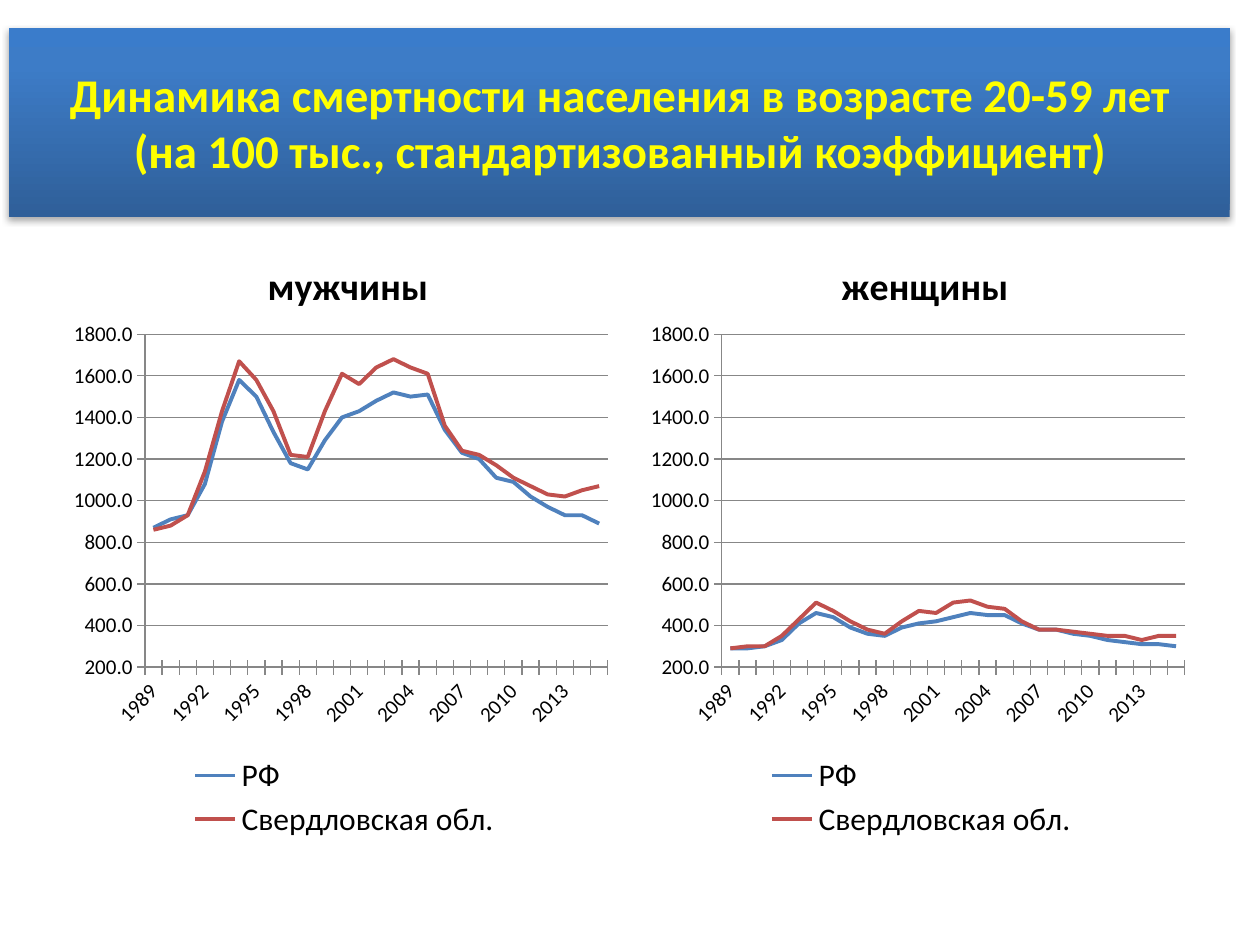
import copy
import dataclasses

import pptx
import pptx.chart.data
import pptx.dml.color
import pptx.enum.chart
import pptx.enum.shapes
import pptx.enum.text
import pptx.oxml
import pptx.oxml.ns
import pptx.util

Cm = pptx.util.Cm
Pt = pptx.util.Pt
Color = pptx.dml.color.RGBColor.from_string
qn = pptx.oxml.ns.qn


@dataclasses.dataclass(frozen=True)
class Theme:
    font: str = "Calibri"
    ink: str = "000000"
    heading: str = "FFFF00"
    grid: str = "878787"
    banner: tuple = ((0, "2F5F99"), (0.8, "3D7CC7"), (1, "3A7CCB"))
    series: tuple = ("4F81BD", "C0504D")
    heading_size: float = 26.8
    chart_title_size: float = 21.6
    legend_size: float = 18
    axis_size: float = 12


theme = Theme()


def place(element, index, **fractions):
    for old in element.findall(qn("c:layout")):
        element.remove(old)
    target = '<c:layoutTarget val="inner"/>' if element.tag == qn("c:plotArea") else ""
    modes = '<c:xMode val="edge"/><c:yMode val="edge"/>'
    values = "".join(f'<c:{key} val="{value}"/>' for key, value in fractions.items())
    element.insert(index, pptx.oxml.parse_xml(
        f'<c:layout {pptx.oxml.ns.nsdecls("c")}><c:manualLayout>'
        f"{target}{modes}{values}</c:manualLayout></c:layout>"))


def style(font, size, color, bold=False):
    font.name = theme.font
    font.size = Pt(size)
    font.bold = bold
    font.color.rgb = Color(color)


deck = pptx.Presentation()
deck.slide_width = Cm(25.4)
deck.slide_height = Cm(19.05)
page = deck.slides.add_slide(deck.slide_layouts[6])

years = [str(year) for year in range(1989, 2016)]
regions = ("РФ", "Свердловская обл.")
panels = (
    ("мужчины", 1.27, 0.355, (
        (870, 910, 930, 1080, 1380, 1580, 1500, 1330, 1180, 1150, 1290, 1400, 1430, 1480,
         1520, 1500, 1510, 1340, 1230, 1200, 1110, 1090, 1020, 970, 930, 930, 890),
        (860, 880, 930, 1140, 1430, 1670, 1580, 1430, 1220, 1210, 1430, 1610, 1560, 1640,
         1680, 1640, 1610, 1360, 1240, 1220, 1170, 1110, 1070, 1030, 1020, 1050, 1070))),
    ("женщины", 12.9, 0.35, (
        (290, 290, 300, 330, 410, 460, 440, 390, 360, 350, 390, 410, 420, 440,
         460, 450, 450, 410, 380, 380, 360, 350, 330, 320, 310, 310, 300),
        (290, 300, 300, 350, 430, 510, 470, 420, 380, 360, 420, 470, 460, 510,
         520, 490, 480, 420, 380, 380, 370, 360, 350, 350, 330, 350, 350))),
)

for title, left, title_x, rates in panels:
    data = pptx.chart.data.CategoryChartData(number_format="0.0")
    data.categories = years
    for region, values in zip(regions, rates):
        data.add_series(region, values)
    chart = page.shapes.add_chart(
        pptx.enum.chart.XL_CHART_TYPE.LINE,
        Cm(left), Cm(4.45), Cm(11.23), Cm(12.57), data).chart
    style(chart.font, theme.legend_size, theme.ink)

    chart.has_title = True
    paragraph = chart.chart_title.text_frame.paragraphs[0]
    paragraph.text = title
    style(paragraph.font, theme.chart_title_size, theme.ink, True)
    place(chart.chart_title._element, 1, x=title_x, y=0.05)

    chart.has_legend = True
    chart.legend.position = pptx.enum.chart.XL_LEGEND_POSITION.BOTTOM
    chart.legend.include_in_layout = False
    style(chart.legend.font, theme.legend_size, theme.ink)
    place(chart.legend._element, 1, x=0.22, y=0.85, w=0.57, h=0.15)
    place(chart._chartSpace.chart.plotArea, 0, x=0.147, y=0.182, w=0.831, h=0.534)

    for axis in (chart.category_axis, chart.value_axis):
        style(axis.tick_labels.font, theme.axis_size, theme.ink)
        axis.major_tick_mark = pptx.enum.chart.XL_TICK_MARK.CROSS
        axis.minor_tick_mark = pptx.enum.chart.XL_TICK_MARK.NONE
        axis.format.line.color.rgb = Color(theme.grid)
        axis.format.line.width = Pt(0.75)

    years_axis = chart.category_axis._element
    years_axis.find(qn("c:txPr")).find(qn("a:bodyPr")).set("rot", "-2700000")
    for tag, step in (("tickLblSkip", 3), ("tickMarkSkip", 1)):
        years_axis.find(qn("c:noMultiLvlLbl")).addprevious(pptx.oxml.parse_xml(
            f'<c:{tag} {pptx.oxml.ns.nsdecls("c")} val="{step}"/>'))

    rate_axis = chart.value_axis
    rate_axis.minimum_scale = 200
    rate_axis.maximum_scale = 1800
    rate_axis.major_unit = 200
    rate_axis.tick_labels.number_format = "0.0"
    rate_axis.tick_labels.number_format_is_linked = False
    rate_axis.has_major_gridlines = True
    rate_axis.major_gridlines.format.line.color.rgb = Color(theme.grid)
    rate_axis.major_gridlines.format.line.width = Pt(0.75)

    for series, color in zip(chart.plots[0].series, theme.series):
        series.smooth = False
        series.format.line.color.rgb = Color(color)
        series.format.line.width = Pt(2.25)

banner = page.shapes.add_shape(
    pptx.enum.shapes.MSO_SHAPE.RECTANGLE, Cm(0.18), Cm(0.56), Cm(24.61), Cm(3.81))
banner.line.fill.background()
banner.fill.gradient()
banner.fill.gradient_angle = 90
stop_list = banner._element.spPr.find(".//" + qn("a:gsLst"))
stop_list.append(copy.deepcopy(stop_list[-1]))
for stop, (position, color) in zip(banner.fill.gradient_stops, theme.banner):
    stop.position = position
    stop.color.rgb = Color(color)
banner.shadow.inherit = False
banner._element.spPr.find(qn("a:effectLst")).append(pptx.oxml.parse_xml(
    f'<a:outerShdw {pptx.oxml.ns.nsdecls("a")} blurRad="{Pt(3.5)}" dist="{Pt(2.2)}" '
    f'dir="5400000" rotWithShape="0"><a:srgbClr val="{theme.ink}">'
    '<a:alpha val="32000"/></a:srgbClr></a:outerShdw>'))

box = page.shapes.add_textbox(Cm(1.07), Cm(0.86), Cm(22.86), Cm(3.18))
frame = box.text_frame
frame.word_wrap = True
frame.vertical_anchor = pptx.enum.text.MSO_ANCHOR.MIDDLE
paragraph = frame.paragraphs[0]
paragraph.text = ("Динамика смертности населения в возрасте 20-59 лет "
                  "(на 100 тыс., стандартизованный коэффициент)")
paragraph.alignment = pptx.enum.text.PP_ALIGN.CENTER
style(paragraph.font, theme.heading_size, theme.heading, True)

deck.save("out.pptx")
